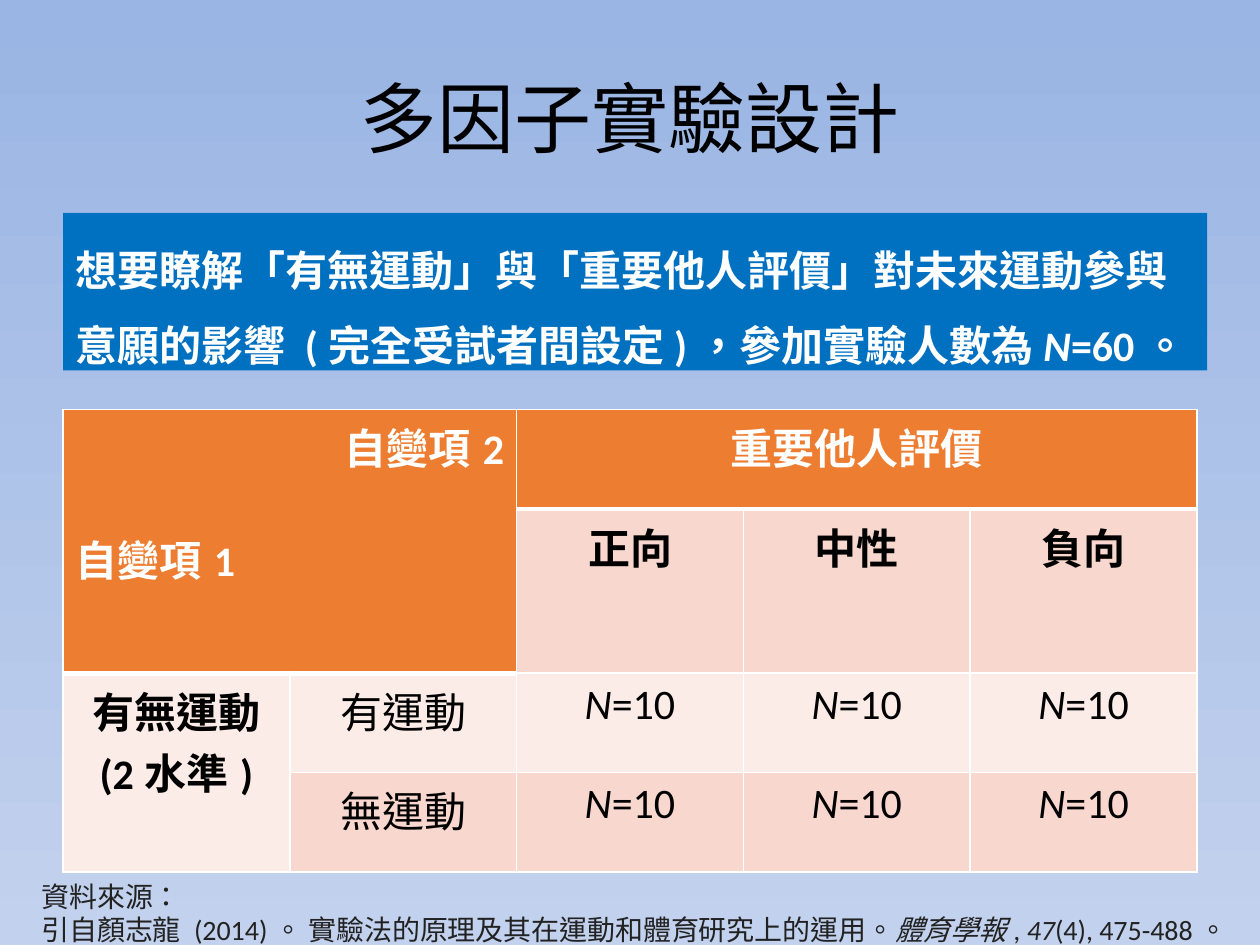
from dataclasses import dataclass

from lxml import etree
from pptx import Presentation
from pptx.dml.color import RGBColor
from pptx.enum.lang import MSO_LANGUAGE_ID
from pptx.enum.shapes import MSO_SHAPE
from pptx.enum.text import MSO_ANCHOR, PP_ALIGN
from pptx.oxml.ns import qn
from pptx.util import Inches, Pt

LEFT, CENTER, RIGHT = PP_ALIGN.LEFT, PP_ALIGN.CENTER, PP_ALIGN.RIGHT
TOP, MIDDLE = MSO_ANCHOR.TOP, MSO_ANCHOR.MIDDLE
RECTANGLE = MSO_SHAPE.RECTANGLE
CHINESE = MSO_LANGUAGE_ID.TRADITIONAL_CHINESE
LATIN_FONT, CJK_FONT = "Calibri", "Noto Sans CJK SC"
WHITE, BLACK, GRAY = "FFFFFF", "000000", "222222"
BLUE, ORANGE, PINK, PALE_PINK = "0070C0", "ED7D31", "F8D7CE", "FCECE8"


@dataclass(frozen=True)
class Style:
    size: float
    color: str
    bold: bool = False
    east_asian: str = CJK_FONT


@dataclass(frozen=True)
class Line:
    runs: tuple[tuple[str, bool], ...]
    align: PP_ALIGN = LEFT
    spacing: float = 1.0
    before: float = 0


@dataclass(frozen=True)
class Entry:
    row: int
    column: int
    lines: tuple[Line, ...]
    style: Style
    fill: str
    row_span: int = 1
    column_span: int = 1
    bottom: float = 1
    top: float = 1


def rgb(color: str) -> RGBColor:
    return RGBColor.from_string(color)


def plain(text: str, align: PP_ALIGN = LEFT, before: float = 0) -> Line:
    return Line(((text, False),), align, before=before)


def write(frame, lines: tuple[Line, ...], style: Style) -> None:
    frame.word_wrap = True
    for index, line in enumerate(lines):
        paragraph = frame.add_paragraph() if index else frame.paragraphs[0]
        paragraph.alignment = line.align
        paragraph.line_spacing = line.spacing
        paragraph.space_before = Pt(line.before)
        for text, italic in line.runs:
            run = paragraph.add_run()
            run.text = text
            font = run.font
            font.size, font.bold, font.italic = Pt(style.size), style.bold, italic
            font.color.rgb = rgb(style.color)
            font.name = LATIN_FONT
            font.language_id = CHINESE
            etree.SubElement(run._r.get_or_add_rPr(), qn("a:ea"), typeface=style.east_asian)


def draw_borders(cell, top: float, bottom: float) -> None:
    properties = cell._tc.get_or_add_tcPr()
    for side, width in (("L", 1), ("R", 1), ("T", top), ("B", bottom)):
        border = etree.SubElement(properties, qn(f"a:ln{side}"), w=str(Pt(width)))
        fill = etree.SubElement(border, qn("a:solidFill"))
        etree.SubElement(fill, qn("a:srgbClr"), val=WHITE)


def draw_entry(table, entry: Entry) -> None:
    last_row = entry.row + entry.row_span
    last_column = entry.column + entry.column_span
    origin = table.cell(entry.row, entry.column)
    if entry.row_span * entry.column_span > 1:
        origin.merge(table.cell(last_row - 1, last_column - 1))
    for row in range(entry.row, last_row):
        for column in range(entry.column, last_column):
            cell = table.cell(row, column)
            draw_borders(cell, entry.top, entry.bottom)
            cell.fill.solid()
            cell.fill.fore_color.rgb = rgb(entry.fill)
    origin.vertical_anchor = TOP
    write(origin.text_frame, entry.lines, entry.style)


def design_entries() -> list[Entry]:
    header = Style(24, WHITE, bold=True)
    label = Style(24, BLACK, bold=True)
    body = Style(24, BLACK)
    group_size = Line((("N", True), ("=10", False)), CENTER)
    entries = [
        Entry(0, 0, (plain("自變項2", RIGHT), plain("自變項1", before=29)),
              header, ORANGE, row_span=2, column_span=2, bottom=3),
        Entry(0, 2, (plain("重要他人評價", CENTER),), header, ORANGE, column_span=3, bottom=3),
        Entry(2, 0, (plain("有無運動", CENTER), plain("(2水準)", CENTER)),
              label, PALE_PINK, row_span=2, top=3),
    ]
    for column, rating in enumerate(("正向", "中性", "負向"), start=2):
        entries.append(Entry(1, column, (plain(rating, CENTER),), label, PINK, top=3))
    for row, exercise, fill in ((2, "有運動", PALE_PINK), (3, "無運動", PINK)):
        entries.append(Entry(row, 1, (plain(exercise, CENTER),), body, fill,
                             top=3 if row == 2 else 1))
        for column in range(2, 5):
            entries.append(Entry(row, column, (group_size,), body, fill))
    return entries


def main() -> None:
    presentation = Presentation()
    presentation.slide_width, presentation.slide_height = Inches(10), Inches(7.5)
    slide = presentation.slides.add_slide(presentation.slide_layouts[5])

    backdrop = slide.background.fill
    backdrop.gradient()
    backdrop.gradient_angle = 270
    for stop, color in zip(backdrop.gradient_stops, ("9AB5E4", "C2D1ED")):
        stop.color.rgb = rgb(color)

    title = slide.shapes.title
    title.left, title.top = Inches(0.5), Inches(0.3)
    title.width, title.height = Inches(9), Inches(1.25)
    title.text_frame.vertical_anchor = MIDDLE
    write(title.text_frame, (plain("多因子實驗設計", CENTER),), Style(44, BLACK))

    source = slide.shapes.add_textbox(Inches(0.23), Inches(6.93), Inches(10.02), Inches(0.64))
    citation = Line((
        ("引自顏志龍 (2014)。 實驗法的原理及其在運動和體育研究上的運用。", False),
        ("體育學報", True),
        (",\u00a0", False),
        ("47", True),
        ("(4), 475-488。", False),
    ))
    write(source.text_frame, (plain("資料來源："), citation),
          Style(16, GRAY, east_asian=LATIN_FONT))

    design = slide.shapes.add_table(4, 5, Inches(0.5), Inches(3.25), Inches(9), Inches(3.67)).table
    for column in design.columns:
        column.width = Inches(1.8)
    for row, height in zip(design.rows, (0.79, 1.3, 0.79, 0.79)):
        row.height = Inches(height)
    for entry in design_entries():
        draw_entry(design, entry)

    question = slide.shapes.add_shape(
        RECTANGLE, Inches(0.5), Inches(1.69), Inches(9.08), Inches(1.25))
    question.shadow.inherit = False
    question.fill.solid()
    question.fill.fore_color.rgb = rgb(BLUE)
    question.line.fill.background()
    question.text_frame.vertical_anchor = TOP
    aim = Line((
        ("想要瞭解「有無運動」與「重要他人評價」對未來運動參與意願的影響 "
         "(完全受試者間設定)，參加實驗人數為", False),
        ("N", True),
        ("=60。", False),
    ), spacing=1.5)
    write(question.text_frame, (aim,), Style(24, WHITE, bold=True, east_asian=LATIN_FONT))

    presentation.save("out.pptx")


if __name__ == "__main__":
    main()
